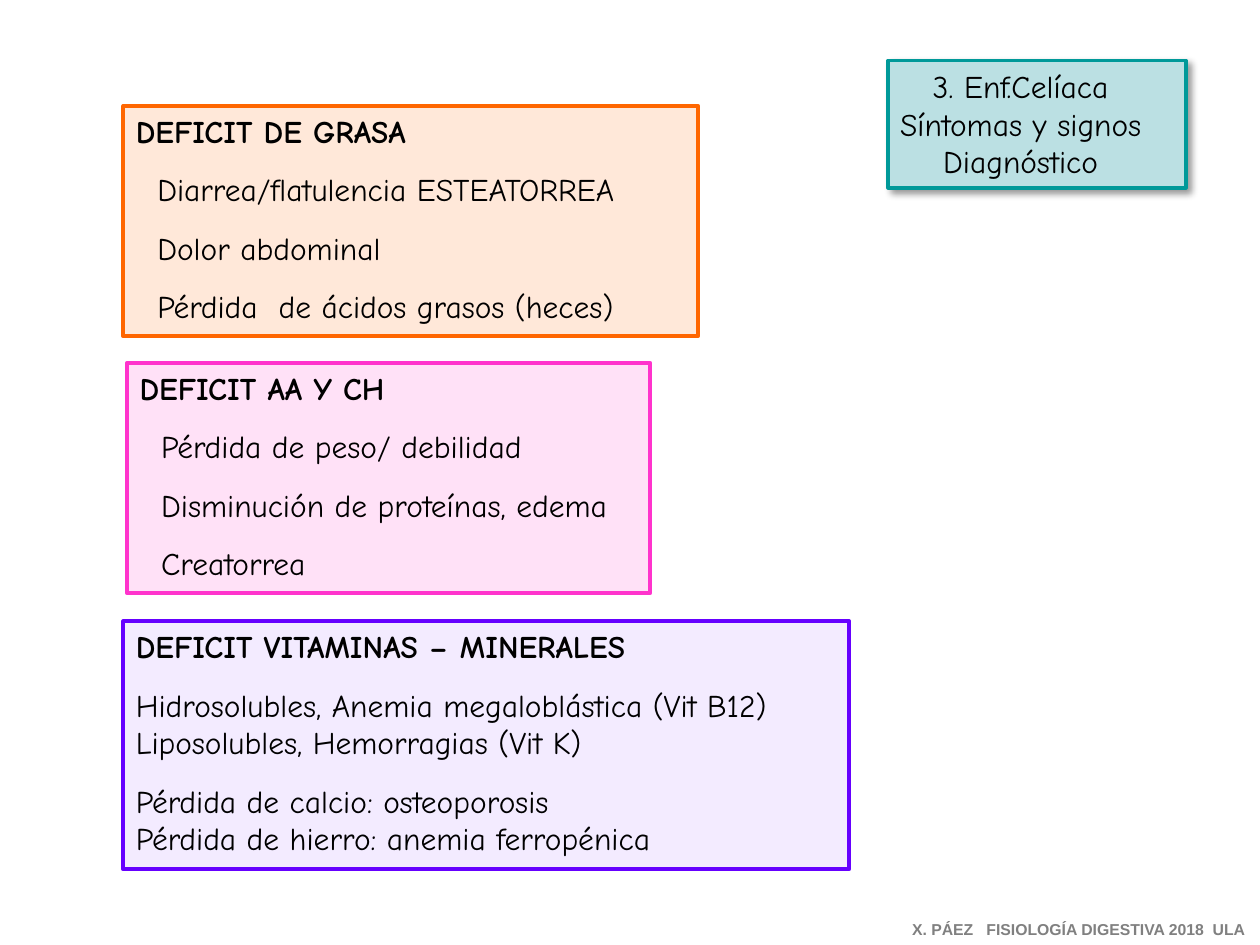
from lxml import etree
from pptx import Presentation
from pptx.dml.color import RGBColor
from pptx.enum.shapes import MSO_SHAPE
from pptx.enum.text import MSO_ANCHOR, MSO_AUTO_SIZE, PP_ALIGN
from pptx.oxml.ns import qn
from pptx.util import Inches, Pt

RECTANGLE = MSO_SHAPE.RECTANGLE
TOP = MSO_ANCHOR.TOP
NO_FIT = MSO_AUTO_SIZE.NONE
LEFT, CENTER = PP_ALIGN.LEFT, PP_ALIGN.CENTER
TITLE_ONLY = 5

COLORS = {
    "text": "000000", "footer": "808080", "shadow": "000000",
    "title": "BBE0E3", "title_line": "009999",
    "fat": "FFE8D9", "fat_line": "FF6600",
    "protein": "FFE1F7", "protein_line": "FF33CC",
    "vitamin": "F3EBFF", "vitamin_line": "6600FF",
}


class SlideBuilder:
    font = "Comic Neue"
    size = 18
    group_gap = 11.7
    item_indent = 0.17

    def __init__(self, slide):
        self.slide = slide

    def color(self, name):
        return RGBColor.from_string(COLORS[name])

    def paint(self, box, name):
        box.fill.solid()
        box.fill.fore_color.rgb = self.color(name)
        box.line.color.rgb = self.color(name + "_line")
        box.line.width = Pt(2.25)

    def frame(self, box, wrap, left=0.1, right=0.1):
        frame = box.text_frame
        frame.auto_size = NO_FIT
        frame.word_wrap = wrap
        frame.vertical_anchor = TOP
        frame.margin_left, frame.margin_right = Inches(left), Inches(right)
        frame.margin_top = frame.margin_bottom = Inches(0.05)
        return frame

    def add_line(self, frame, text, first=False, bold=False, align=LEFT,
                 gap=0, indent=0, size=size, font=font, color="text"):
        para = frame.paragraphs[0] if first else frame.add_paragraph()
        para.alignment = align
        para.space_before = Pt(gap)
        if indent:
            para._p.get_or_add_pPr().set("marL", str(Inches(indent)))
        span = para.add_run()
        span.text = text
        span.font.name = font
        span.font.size = Pt(size)
        span.font.bold = bold
        span.font.color.rgb = self.color(color)

    def add_shadow(self, box):
        effects = etree.SubElement(box._element.spPr, qn("a:effectLst"))
        shadow = etree.SubElement(
            effects, qn("a:outerShdw"), blurRad=str(Pt(4)), dist=str(Pt(3)),
            dir=str(45 * 60000), algn="tl", rotWithShape="0")
        tint = etree.SubElement(shadow, qn("a:srgbClr"), val=COLORS["shadow"])
        etree.SubElement(tint, qn("a:alpha"), val="40000")

    def title(self, lines, left, top, width, height):
        box = self.slide.shapes.title
        box.left, box.top = Inches(left), Inches(top)
        box.width, box.height = Inches(width), Inches(height)
        self.paint(box, "title")
        self.add_shadow(box)
        # The wider right margin sets the lines left of the box centre
        frame = self.frame(box, True, left=0.05, right=0.31)
        for index, line in enumerate(lines):
            self.add_line(frame, line, first=index == 0, align=CENTER)

    def panel(self, name, heading, groups, indent, left, top, width, height):
        box = self.slide.shapes.add_shape(
            RECTANGLE, Inches(left), Inches(top), Inches(width), Inches(height))
        box.shadow.inherit = False
        self.paint(box, name)
        frame = self.frame(box, True)
        self.add_line(frame, heading, first=True, bold=True)
        for group in groups:
            for index, item in enumerate(group):
                gap = self.group_gap if index == 0 else 0
                self.add_line(frame, item, gap=gap, indent=indent)

    def footer(self, text, left, top, width, height):
        box = self.slide.shapes.add_textbox(
            Inches(left), Inches(top), Inches(width), Inches(height))
        self.add_line(self.frame(box, False), text, first=True, bold=True,
                      size=9, font="Arial", color="footer")


def main():
    deck = Presentation()
    deck.slide_width, deck.slide_height = Inches(10), Inches(7.5)
    page = SlideBuilder(deck.slides.add_slide(deck.slide_layouts[TITLE_ONLY]))

    # Topic
    page.title(["3. Enf.Celíaca", "Síntomas y signos", "Diagnóstico"],
               7.05, 0.48, 2.36, 1.01)

    # Deficits, each a heading with groups of signs
    page.panel("fat", "DEFICIT DE GRASA",
               [["Diarrea/flatulencia ESTEATORREA"],
                ["Dolor abdominal"],
                ["Pérdida  de ácidos grasos (heces)"]],
               page.item_indent, 0.98, 0.84, 4.56, 1.83)
    page.panel("protein", "DEFICIT AA Y CH",
               [["Pérdida de peso/ debilidad"],
                ["Disminución de proteínas, edema"],
                ["Creatorrea"]],
               page.item_indent, 1.01, 2.88, 4.15, 1.83)
    page.panel("vitamin", "DEFICIT VITAMINAS – MINERALES",
               [["Hidrosolubles, Anemia megaloblástica (Vit B12)",
                 "Liposolubles, Hemorragias (Vit K)"],
                ["Pérdida de calcio: osteoporosis",
                 "Pérdida de hierro: anemia ferropénica"]],
               0, 0.98, 4.93, 5.76, 1.97)

    # Credit line
    page.footer("X. PÁEZ   FISIOLOGÍA DIGESTIVA 2018  ULA",
                7.14, 7.25, 2.86, 0.25)

    deck.save("out.pptx")


if __name__ == "__main__":
    main()
